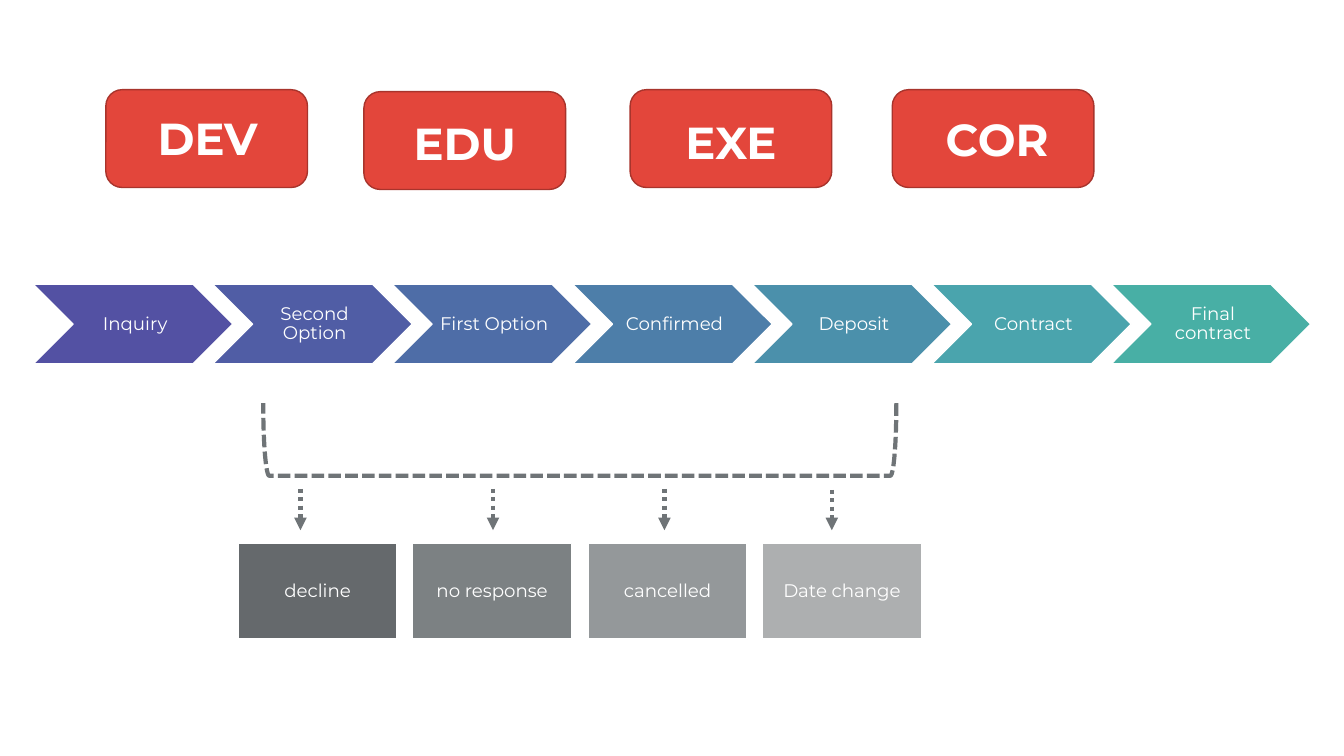
from lxml import etree
from pptx import Presentation
from pptx import util as u
from pptx.dml.color import RGBColor
from pptx.enum import dml, shapes, text
from pptx.oxml.ns import qn

PX = 9144
SHAPE = shapes.MSO_SHAPE
WHITE = "FFFFFF"
GREY = "6F7477"


def rgb(value):
    return RGBColor.from_string(value)


class Deck:
    """Holds the style and the slide being drawn."""

    font = "Montserrat"

    def __init__(self, width, height):
        self.prs = Presentation()
        self.prs.slide_width = width * PX
        self.prs.slide_height = height * PX
        self.s = self.prs.slides.add_slide(self.prs.slide_layouts[6])

    def outline(self, line, color, width, dash=None):
        line.color.rgb = rgb(color)
        line.width = u.Pt(width)
        if dash:
            line.dash_style = dash

    def shape(self, kind, box, fill, line, width=1, dash=None):
        sp = self.s.shapes.add_shape(kind, *(n * PX for n in box))
        sp.shadow.inherit = False
        if fill:
            sp.fill.solid()
            sp.fill.fore_color.rgb = rgb(fill)
        else:
            sp.fill.background()
        self.outline(sp.line, line, width, dash)
        return sp

    def label(self, sp, words, size, insets, bold=False, spacing=1.0):
        tf = sp.text_frame
        tf.word_wrap = True
        tf.vertical_anchor = text.MSO_ANCHOR.MIDDLE
        tf.margin_left, tf.margin_top, tf.margin_right, tf.margin_bottom = (
            n * PX for n in insets)
        tf.text = words
        p = tf.paragraphs[0]
        p.alignment = text.PP_ALIGN.CENTER
        p.line_spacing = spacing
        font = p.runs[0].font
        font.name = self.font
        font.size = u.Pt(size)
        font.bold = bold
        font.color.rgb = rgb(WHITE)

    def step(self, kind, box, fill, words, insets):
        sp = self.shape(kind, box, fill, WHITE)
        self.label(sp, words, 13, insets, spacing=0.9)

    def card(self, left, top, words, label_left, label_top):
        self.shape(SHAPE.ROUNDED_RECTANGLE, (left, top, 200, 97), "E3463B", "A8342C")
        box = (label_left, label_top, 146, 64)
        sp = self.s.shapes.add_textbox(*(n * PX for n in box))
        self.label(sp, words, 32, (10, 5, 10, 5), bold=True)

    def arrow(self, x, top, bottom):
        c = self.s.shapes.add_connector(
            shapes.MSO_CONNECTOR.STRAIGHT, x * PX, top * PX, x * PX, bottom * PX)
        self.outline(c.line, GREY, 3, dml.MSO_LINE.ROUND_DOT)
        sp_pr = c._element.spPr
        etree.SubElement(sp_pr.find(qn("a:ln")), qn("a:tailEnd"), type="triangle")
        etree.SubElement(sp_pr, qn("a:effectLst"))


def main():
    deck = Deck(1333, 750)

    stages = [("Inquiry", "5351A3"), ("Second Option", "505DA5"),
              ("First Option", "4E6DA7"), ("Confirmed", "4D7EA9"),
              ("Deposit", "4B90AB"), ("Contract", "4AA4AD"),
              ("Final contract", "48AFA5")]
    for i, (words, fill) in enumerate(stages):
        box = (round(33 + 178.2 * i), 282, 198, 79)
        deck.step(SHAPE.CHEVRON, box, fill, words, (6, 2, 2, 2))

    outcomes = [("decline", "65696C"), ("no response", "7C8183"),
                ("cancelled", "94989A"), ("Date change", "ADAFB0")]
    for i, (words, fill) in enumerate(outcomes):
        box = (round(236 + 173.4 * i), 539, 158, 95)
        deck.step(SHAPE.RECTANGLE, box, fill, words, (5, 5, 5, 5))

    bracket = deck.shape(SHAPE.RIGHT_BRACKET, (539, 122, 72, 628), None, GREY, 3,
                         dml.MSO_LINE.SQUARE_DOT)
    bracket.rotation = 90

    for x, top in [(298, 485), (489, 485), (659, 485), (825, 486)]:
        deck.arrow(x, top, 526)

    for card in [(105, 89, "DEV", 133, 104), (361, 91, "EDU", 388, 109),
                 (625, 89, "EXE", 652, 108), (885, 89, "COR", 916, 106)]:
        deck.card(*card)

    deck.prs.save("out.pptx")


if __name__ == "__main__":
    main()
